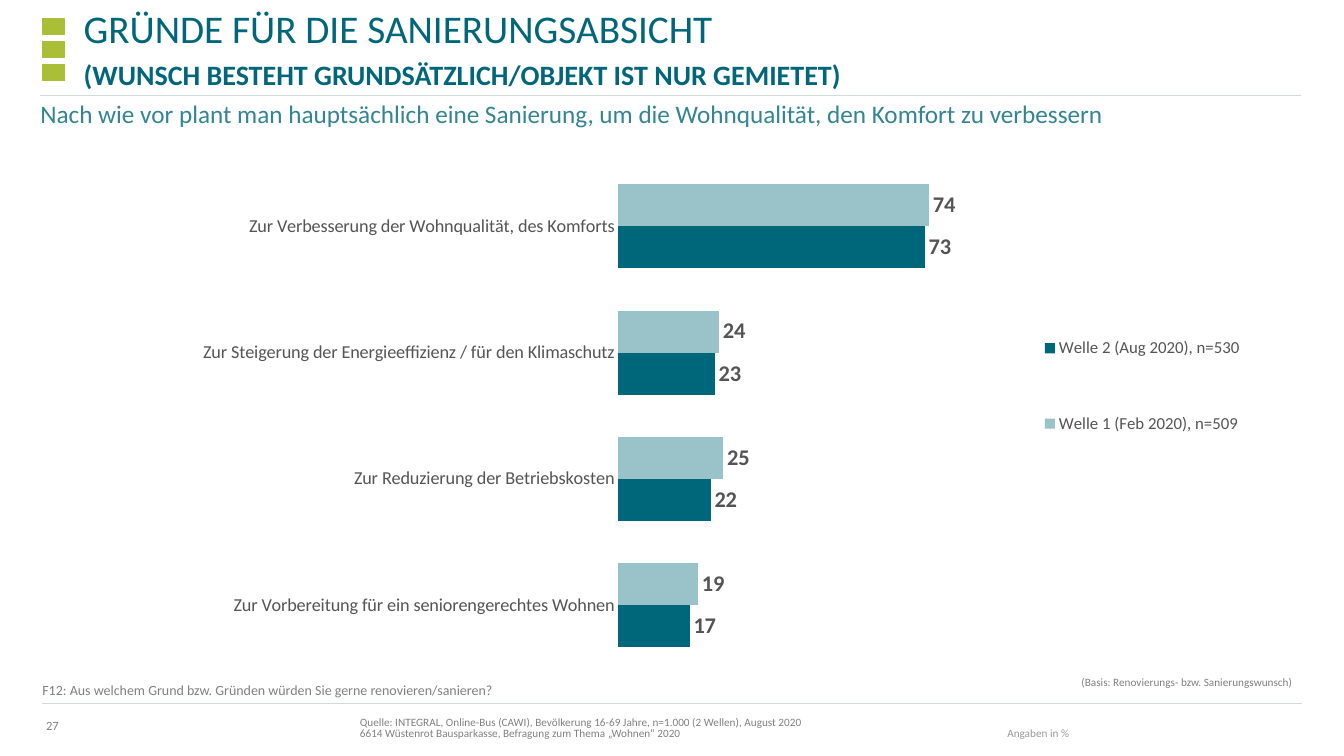
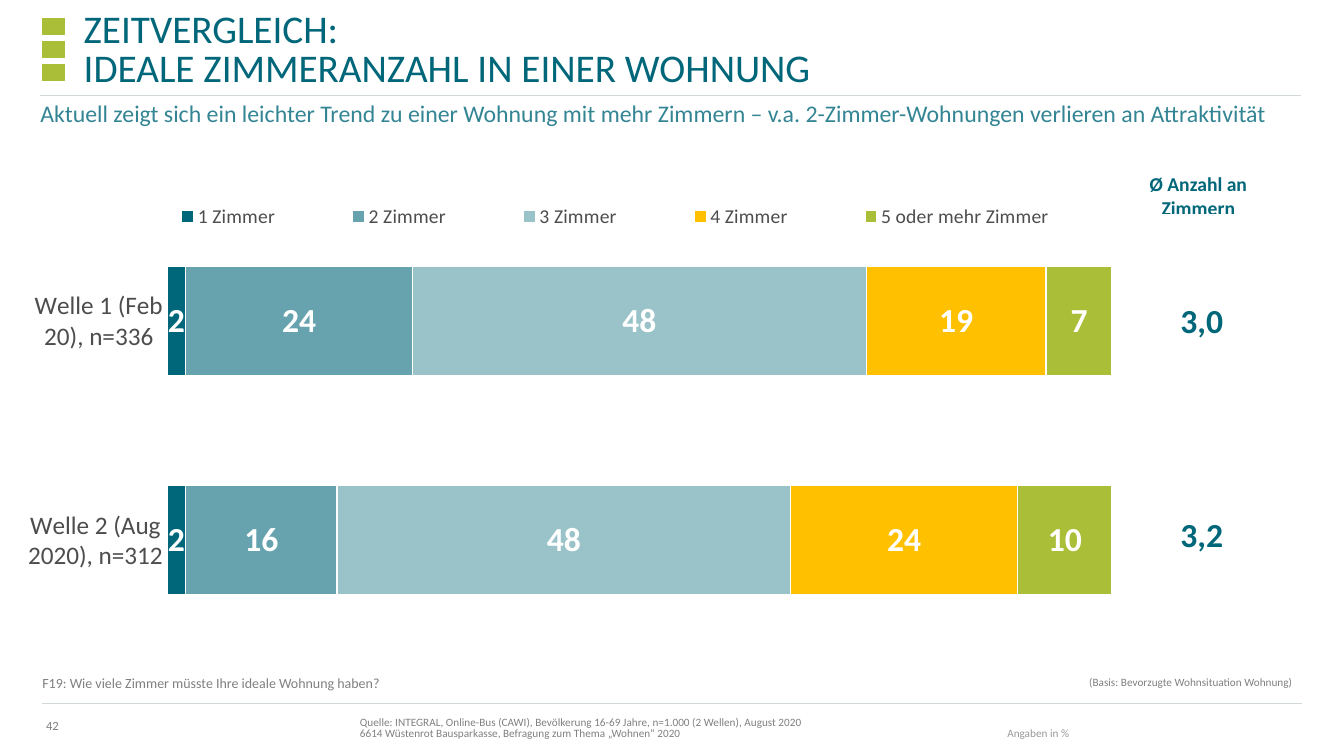
from dataclasses import dataclass

from lxml import etree
from pptx import Presentation
from pptx import util as u
from pptx.chart import data as cd
from pptx.dml.color import RGBColor
from pptx.enum import chart as ch
from pptx.enum import shapes as sh
from pptx.enum import text as tx
from pptx.oxml.ns import qn


@dataclass(frozen=True)
class Theme:
    font: str = "Calibri"
    teal: str = "006679"
    lead: str = "338594"
    mid: str = "66A3AF"
    pale: str = "99C2C9"
    gold: str = "FFC000"
    green: str = "ABBE37"
    white: str = "FFFFFF"
    rule: str = "D1DAD9"
    ink: str = "545454"
    dark: str = "4D4D4D"
    gray: str = "808080"
    light: str = "989898"
    head: int = 28
    sub: int = 20
    big: int = 24
    mean: int = 14
    note: int = 10
    page: int = 9
    small: int = 8


T = Theme()
LEFT, MID, RIGHT = tx.PP_ALIGN.LEFT, tx.PP_ALIGN.CENTER, tx.PP_ALIGN.RIGHT
TOP, CORE, BASE = tx.MSO_ANCHOR.TOP, tx.MSO_ANCHOR.MIDDLE, tx.MSO_ANCHOR.BOTTOM
SOURCE = ("Quelle: INTEGRAL, Online-Bus (CAWI), Bevölkerung 16-69 Jahre, n=1.000 (2 Wellen), August 2020\v"
          "6614 Wüstenrot Bausparkasse, Befragung zum Thema „Wohnen“ 2020")


def rgb(tint):
    return RGBColor.from_string(tint)


def style(font, size, tint, bold=False):
    font.name, font.size, font.bold = T.font, u.Pt(size), bold
    font.color.rgb = rgb(tint)


def place(node, spot, box, inner=False):
    for old in node.findall(qn("c:layout")):
        node.remove(old)
    lay = etree.Element(qn("c:layout"))
    man = etree.SubElement(lay, qn("c:manualLayout"))
    parts = [("layoutTarget", "inner")] if inner else []
    parts += [("xMode", "edge"), ("yMode", "edge"), *zip("xywh", box)]
    for tag, val in parts:
        etree.SubElement(man, qn("c:" + tag)).set("val", str(val))
    node.insert(spot, lay)


class Deck:
    def __init__(self):
        self.prs = Presentation()
        self.prs.slide_width, self.prs.slide_height = u.Inches(13.33), u.Inches(7.5)
        self.slide = None

    def start(self, page):
        self.slide = self.prs.slides.add_slide(self.prs.slide_layouts[4])
        spare = self.slide.placeholders[4].element
        spare.getparent().remove(spare)
        for row in range(3):
            self.block(0.42, 0.18 + 0.23 * row, 0.22, 0.16)
        self.line(0.42, 12.91, 6.98)
        self.line(0.4, 12.9, 0.95)
        pad = (0.22, 0.05, 0.1, 0.05)
        self.label(SOURCE, (3.35, 7.06, 8.77, 0.33), T.small, T.gray, pad=pad, anchor=BASE, lead=0.85)
        self.label("Angaben in %", (9.77, 7.17, 1.01, 0.22), T.small, T.light, pad=pad, anchor=BASE, lead=0.85)
        self.label(page, (0.4, 7.12, 0.24, 0.15), T.page, T.gray,
                   pad=(0, 0, 0, 0), anchor=CORE, align=MID, wrap=False)

    def block(self, *box):
        rect = self.slide.shapes.add_shape(sh.MSO_SHAPE.RECTANGLE, *map(u.Inches, box))
        rect.shadow.inherit = False
        rect.fill.solid()
        rect.fill.fore_color.rgb = rect.line.color.rgb = rgb(T.green)
        rect.line.width = u.Pt(0.5)

    def line(self, x1, x2, y):
        ends = map(u.Inches, (x1, y, x2, y))
        rule = self.slide.shapes.add_connector(sh.MSO_CONNECTOR.STRAIGHT, *ends)
        rule.line.color.rgb = rgb(T.rule)
        rule.line.width = u.Pt(0.75)
        etree.SubElement(rule.element.spPr, qn("a:effectLst"))

    def fit(self, shape, words, size, tint, bold=False, align=LEFT, anchor=TOP,
            pad=(0.1, 0.05, 0.1, 0.05), lead=None, wrap=True):
        frame = shape.text_frame
        frame.text = words
        frame.auto_size, frame.word_wrap = tx.MSO_AUTO_SIZE.NONE, wrap
        frame.vertical_anchor = anchor
        (frame.margin_left, frame.margin_top,
         frame.margin_right, frame.margin_bottom) = map(u.Inches, pad)
        para = frame.paragraphs[0]
        para.alignment = align
        if lead:
            para.line_spacing = lead
        for run in para.runs:
            style(run.font, size, tint, bold)
        return para

    def label(self, words, box, size, tint, **look):
        self.fit(self.slide.shapes.add_textbox(*map(u.Inches, box)), words, size, tint, **look)

    def holder(self, idx, words, box, size, tint, **look):
        shape = self.slide.placeholders[idx]
        shape.left, shape.top, shape.width, shape.height = map(u.Inches, box)
        para = self.fit(shape, words, size, tint, **look)
        if idx:
            prop = para._p.get_or_add_pPr()
            prop.set("marL", "0")
            prop.set("indent", "0")
            etree.SubElement(prop, qn("a:buNone"))
            para.space_before = u.Pt(0)
        return para

    def title(self, words, sub=False):
        para = self.holder(0, words, (0.73, 0.37, 12.18, 0.53), T.head, T.teal,
                           anchor=BASE, pad=(0.1, 0, 0.1, 0), lead=u.Pt(28))
        if sub:
            style(para.runs[1].font, T.sub, T.teal, True)

    def lead(self, words, size):
        self.holder(1, words, (0.4, 0.98, 12.81, 0.32), size, T.lead, pad=(0, 0, 0.1, 0.05))

    def notes(self, ask, base, top, high):
        pad = (0, 0.05, 0, 0.05)
        self.holder(2, ask, (0.42, top, 8.4, high), T.note, T.gray, anchor=CORE, pad=pad)
        self.holder(3, base, (8.83, 6.59, 3.99, 0.36), T.small, T.gray,
                    anchor=CORE, align=RIGHT, pad=pad)

    def chart(self, kind, box, cats, rows, peak, plot, key, axis, tag):
        data = cd.CategoryChartData()
        data.categories = cats
        for name, vals, _ in rows:
            data.add_series(name, vals)
        graph = self.slide.shapes.add_chart(kind, *map(u.Inches, box), data).chart
        stack = kind == ch.XL_CHART_TYPE.BAR_STACKED
        graph.has_title = False
        style(graph.font, T.note, T.ink)
        cat, val = graph.category_axis, graph.value_axis
        cat.reverse_order = True
        cat.major_tick_mark = ch.XL_TICK_MARK.NONE
        cat.format.line.fill.background()
        style(cat.tick_labels.font, *axis)
        val.minimum_scale, val.maximum_scale, val.major_unit = 0, peak, 20
        val.has_major_gridlines = val.visible = False
        bars = graph.plots[0]
        bars.gap_width, bars.overlap = 100, 100 if stack else 0
        bars.vary_by_categories = False
        for item, (_, _, tint) in zip(bars.series, rows):
            item.format.fill.solid()
            item.format.fill.fore_color.rgb = rgb(tint)
            if stack:
                item.format.line.color.rgb = rgb(T.white)
                item.format.line.width = u.Pt(1)
            marks = item.data_labels
            marks.show_value = True
            spot = ch.XL_LABEL_POSITION
            marks.position = spot.CENTER if stack else spot.OUTSIDE_END
            style(marks.font, *tag, True)
        graph.has_legend = True
        side = ch.XL_LEGEND_POSITION
        graph.legend.position = side.TOP if stack else side.RIGHT
        graph.legend.include_in_layout = False
        size, tint, area = key
        style(graph.legend.font, size, tint)
        root = graph._chartSpace
        place(root.xpath("c:chart/c:plotArea")[0], 0, plot, True)
        place(root.xpath("c:chart/c:legend")[0], 1, area)

    def means(self, vals, box):
        grid = self.slide.shapes.add_table(len(vals), 1, *map(u.Inches, box)).table
        grid.first_row = grid.horz_banding = False
        for row, val in enumerate(vals):
            cell = grid.cell(row, 0)
            cell.fill.background()
            cell.text = val
            cell.vertical_anchor = CORE
            cell.margin_left = cell.margin_right = cell.margin_top = u.Inches(0.01)
            cell.margin_bottom = 0
            para = cell.text_frame.paragraphs[0]
            para.alignment = MID
            style(para.runs[0].font, T.big, T.teal, True)


def main():
    deck = Deck()
    kinds = ch.XL_CHART_TYPE

    deck.start("27")
    deck.title("GRÜNDE FÜR DIE SANIERUNGSABSICHT\v"
               "(WUNSCH BESTEHT GRUNDSÄTZLICH/OBJEKT IST NUR GEMIETET)", sub=True)
    deck.lead("Nach wie vor plant man hauptsächlich eine Sanierung, "
              "um die Wohnqualität, den Komfort zu verbessern", 18)
    deck.chart(
        kinds.BAR_CLUSTERED, (0, 1.35, 13.33, 5.39),
        ["Zur Verbesserung der Wohnqualität, des Komforts",
         "Zur Steigerung der Energieeffizienz / für den Klimaschutz",
         "Zur Reduzierung der Betriebskosten",
         "Zur Vorbereitung für ein seniorengerechtes Wohnen"],
        [("Welle 1 (Feb 2020), n=509", (74, 24, 25, 19), T.pale),
         ("Welle 2 (Aug 2020), n=530", (73, 23, 22, 17), T.teal)],
        peak=160, plot=(0.46, 0.05, 0.5, 0.93), key=(12, T.ink, (0.76, 0.27, 0.18, 0.38)),
        axis=(13, T.ink), tag=(16, T.ink))
    deck.notes("F12: Aus welchem Grund bzw. Gründen würden Sie gerne renovieren/sanieren?",
               "(Basis: Renovierungs- bzw. Sanierungswunsch)", 6.74, 0.2)

    deck.start("42")
    deck.title("ZEITVERGLEICH:\vIDEALE ZIMMERANZAHL IN EINER WOHNUNG")
    deck.lead("Aktuell zeigt sich ein leichter Trend zu einer Wohnung mit mehr Zimmern – "
              "v.a. 2-Zimmer-Wohnungen verlieren an Attraktivität", 17)
    deck.chart(
        kinds.BAR_STACKED, (0.21, 1.49, 11.12, 5.06),
        ["Welle 1 (Feb 20), n=336", "Welle 2 (Aug 2020), n=312"],
        [("1 Zimmer", (2, 2), T.teal), ("2 Zimmer", (24, 16), T.mid),
         ("3 Zimmer", (48, 48), T.pale), ("4 Zimmer", (19, 24), T.gold),
         ("5 oder mehr Zimmer", (7, 10), T.green)],
        peak=102, plot=(0.13, 0.12, 0.86, 0.86), key=(14, T.dark, (0.08, 0.09, 0.9, 0.08)),
        axis=(18, T.dark), tag=(T.big, T.white))
    deck.label("Ø Anzahl an Zimmern", (11.24, 1.66, 1.29, 0.57), T.mean, T.teal, bold=True, align=MID)
    deck.means(["3,0", "3,2"], (11.46, 2.13, 0.92, 4.25))
    deck.notes("F19: Wie viele Zimmer müsste Ihre ideale Wohnung haben?",
               "(Basis: Bevorzugte Wohnsituation Wohnung)", 6.59, 0.36)

    deck.prs.save("out.pptx")


if __name__ == "__main__":
    main()
